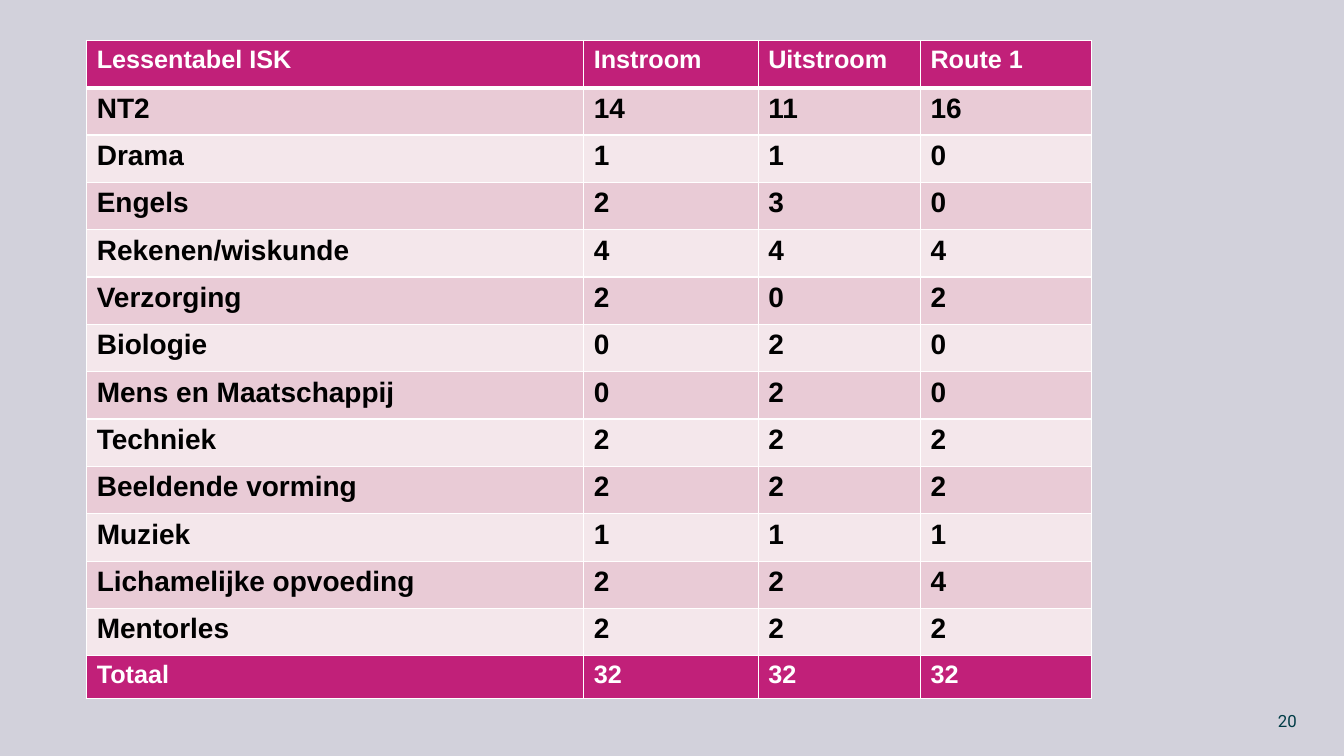
from lxml import etree
from pptx import Presentation
from pptx.dml.color import RGBColor
from pptx.enum import text
from pptx.oxml import ns
from pptx.util import Inches, Pt

# Content
HEADER = ("Lessentabel ISK", "Instroom", "Uitstroom", "Route 1")
LESSONS = [
    ("NT2", 14, 11, 16),
    ("Drama", 1, 1, 0),
    ("Engels", 2, 3, 0),
    ("Rekenen/wiskunde", 4, 4, 4),
    ("Verzorging", 2, 0, 2),
    ("Biologie", 0, 2, 0),
    ("Mens en Maatschappij", 0, 2, 0),
    ("Techniek", 2, 2, 2),
    ("Beeldende vorming", 2, 2, 2),
    ("Muziek", 1, 1, 1),
    ("Lichamelijke opvoeding", 2, 2, 4),
    ("Mentorles", 2, 2, 2),
]
TOTAL = ("Totaal", 32, 32, 32)
PAGE = "20"

# Look and grid
COLORS = {"back": "D2D1DB", "accent": "C12079", "odd": "E9CBD6", "even": "F4E7EB",
          "white": "FFFFFF", "black": "000000", "page": "003C46"}
LEFT, TOP = 0.86, 0.4
COL_WIDTHS = (4.93, 1.73, 1.61, 1.7)
ROW_HEIGHT, TOTAL_HEIGHT = 0.47, 0.42


def color(name):
    return RGBColor.from_string(COLORS[name])


def add_run(p, value, font, size, ink, bold=False):
    r = p.add_run()
    r.text = str(value)
    r.font.name, r.font.size, r.font.bold = font, Pt(size), bold
    r.font.color.rgb = color(ink)


def add_borders(cell, widths):
    tc_pr = cell._tc.get_or_add_tcPr()
    for side, width in zip("LRTB", widths):
        ln = etree.SubElement(tc_pr, ns.qn(f"a:ln{side}"), w=str(Pt(width)))
        fill = etree.SubElement(ln, ns.qn("a:solidFill"))
        etree.SubElement(fill, ns.qn("a:srgbClr"), val=COLORS["white"])


prs = Presentation()
prs.slide_width, prs.slide_height = Inches(13.33), Inches(7.5)
s = prs.slides.add_slide(prs.slide_layouts[6])
s.background.fill.solid()
s.background.fill.fore_color.rgb = color("back")

# Lesson table
rows = [HEADER, *LESSONS, TOTAL]
last = len(rows) - 1
heights = [ROW_HEIGHT] * last + [TOTAL_HEIGHT]
table = s.shapes.add_table(len(rows), len(HEADER), Inches(LEFT), Inches(TOP),
                           Inches(sum(COL_WIDTHS)), Inches(sum(heights))).table
table.last_row = True
for column, width in zip(table.columns, COL_WIDTHS):
    column.width = Inches(width)
for i, (values, height) in enumerate(zip(rows, heights)):
    table.rows[i].height = Inches(height)
    accented = i in (0, last)
    band = "accent" if accented else "odd" if i % 2 else "even"
    size, ink = (18, "white") if accented else (20, "black")
    for j, value in enumerate(values):
        cell = table.cell(i, j)
        add_borders(cell, (1, 1, 3 if i == 1 else 1, 3 if i == 0 else 1))
        cell.fill.solid()
        cell.fill.fore_color.rgb = color(band)
        add_run(cell.text_frame.paragraphs[0], value, "Arial", size, ink, True)

# Page number
tf = s.shapes.add_textbox(Inches(9.96), Inches(6.95), Inches(3), Inches(0.4)).text_frame
tf.word_wrap = True
tf.vertical_anchor = text.MSO_ANCHOR.MIDDLE
p = tf.paragraphs[0]
p.alignment = text.PP_ALIGN.RIGHT
add_run(p, PAGE, "Roboto", 12, "page")

prs.save("out.pptx")
